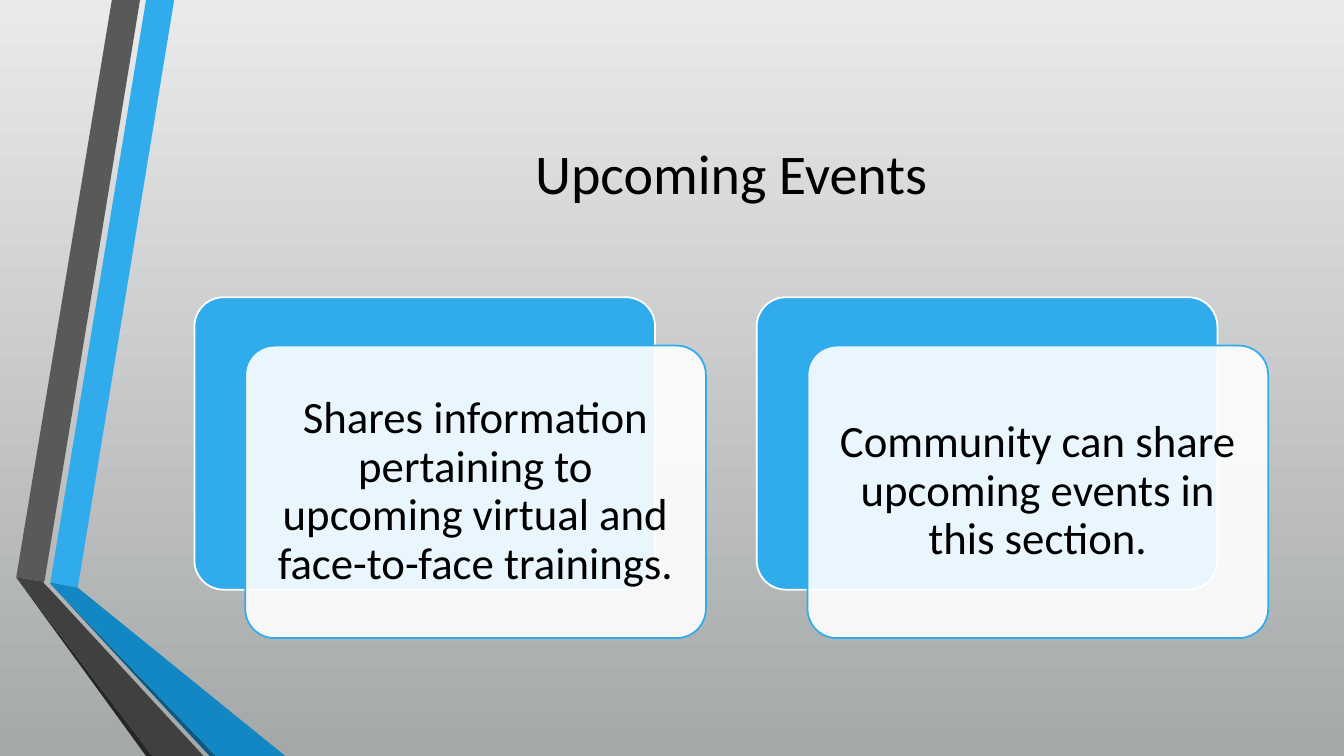
from dataclasses import dataclass

from lxml import etree
from pptx import Presentation
from pptx.dml.color import RGBColor
from pptx.enum import shapes, text
from pptx.oxml import ns
from pptx.util import Cm, Pt


@dataclass(frozen=True)
class Theme:
    font: str = "Calibri"
    title_size: float = 40
    card_size: float = 32
    outline: float = 1.25
    ink: str = "000000"
    white: str = "FFFFFF"
    blue: str = "30ACEC"
    blue_shade: str = "1287C3"
    blue_edge: str = "0C5A82"
    grey: str = "595959"
    grey_shade: str = "404040"
    grey_edge: str = "262626"
    sky: str = "E9EAEB"
    ground: str = "A5A8A9"


THEME = Theme()
SLIDE_WIDTH, SLIDE_HEIGHT = 33.87, 19.05

# Ribbon facets from back to front: colour and corner points in centimetres
RIBBONS = [
    (THEME.blue, [(1.27, 14.68), (1.96, 14.81), (4.39, 0), (3.68, 0)]),
    (THEME.grey, [(3.53, 0), (2.82, 0), (0.41, 14.55), (1.12, 14.66)]),
    (THEME.grey_edge, [(0.41, 14.55), (3.68, SLIDE_HEIGHT), (3.84, SLIDE_HEIGHT)]),
    (THEME.blue_edge, [(1.27, 14.71), (5.28, SLIDE_HEIGHT), (5.44, SLIDE_HEIGHT)]),
    (THEME.blue_shade, [(1.27, 14.71), (5.44, SLIDE_HEIGHT), (7.19, SLIDE_HEIGHT),
                        (1.96, 14.81), (1.27, 14.68)]),
    (THEME.grey_shade, [(5.13, SLIDE_HEIGHT), (1.22, 14.81), (1.09, 14.68),
                        (1.12, 14.66), (0.41, 14.55), (3.84, SLIDE_HEIGHT)]),
]

CONTENT_LEFT, CONTENT_WIDTH = 4.9, 27.05
CARD_TOP, CARD_WIDTH, CARD_HEIGHT = 7.49, 11.61, 7.37
CARD_PITCH = 14.17
FRONT_OFFSET = (1.28, 1.22)
EVENTS = [
    "Shares information pertaining to upcoming virtual and face-to-face trainings.",
    "Community can share upcoming events in this section.",
]


def set_all(target, values):
    for name, value in values.items():
        setattr(target, name, value)


def paint(shape, colour, outline=None):
    shape.shadow.inherit = False
    shape.fill.solid()
    shape.fill.fore_color.rgb = RGBColor.from_string(colour)
    if outline:
        shape.line.color.rgb = RGBColor.from_string(outline)
        shape.line.width = Pt(THEME.outline)
    else:
        shape.line.fill.background()


def set_opacity(shape, percent):
    colour = shape.fill.fore_color._xFill.find(ns.qn("a:srgbClr"))
    etree.SubElement(colour, ns.qn("a:alpha"), val=str(percent * 1000))


def write(shape, wording, size, inset, line_spacing=1.0):
    """Fill a shape with one centred paragraph."""
    frame = shape.text_frame
    set_all(frame, {
        "word_wrap": True,
        "vertical_anchor": text.MSO_ANCHOR.MIDDLE,
        "margin_left": inset, "margin_right": inset,
        "margin_top": inset, "margin_bottom": inset,
    })
    paragraph = frame.paragraphs[0]
    paragraph.text = wording
    set_all(paragraph, {"alignment": text.PP_ALIGN.CENTER, "line_spacing": line_spacing})
    set_all(paragraph.font, {"name": THEME.font, "size": Pt(size)})
    paragraph.font.color.rgb = RGBColor.from_string(THEME.ink)


def set_background(slide):
    fill = slide.background.fill
    fill.gradient()
    fill.gradient_angle = 270
    for stop, colour in zip(fill.gradient_stops, (THEME.sky, THEME.ground)):
        stop.color.rgb = RGBColor.from_string(colour)


def add_ribbon(slide, colour, points):
    corners = [(Cm(x), Cm(y)) for x, y in points]
    builder = slide.shapes.build_freeform(*corners[0])
    builder.add_line_segments(corners[1:], close=True)
    paint(builder.convert_to_shape(), colour)


def add_title(slide, wording):
    box = slide.shapes.add_textbox(Cm(CONTENT_LEFT), Cm(1.9), Cm(CONTENT_WIDTH), Cm(4.88))
    write(box, wording, THEME.title_size, Cm(0.25))


def add_panel(slide, left, top, colour, outline):
    panel = slide.shapes.add_shape(
        shapes.MSO_SHAPE.ROUNDED_RECTANGLE,
        Cm(left), Cm(top), Cm(CARD_WIDTH), Cm(CARD_HEIGHT))
    panel.adjustments[0] = 0.1
    paint(panel, colour, outline)
    return panel


def add_event_card(slide, left, wording):
    """Add a blue panel with a translucent text panel shifted over it."""
    shift_x, shift_y = FRONT_OFFSET
    add_panel(slide, left, CARD_TOP, THEME.blue, THEME.white)
    front = add_panel(slide, left + shift_x, CARD_TOP + shift_y, THEME.white, THEME.blue)
    set_opacity(front, 90)
    write(front, wording, THEME.card_size, Cm(0.33), line_spacing=0.9)


def main():
    presentation = Presentation()
    set_all(presentation, {"slide_width": Cm(SLIDE_WIDTH), "slide_height": Cm(SLIDE_HEIGHT)})
    slide = presentation.slides.add_slide(presentation.slide_layouts[6])
    set_background(slide)
    for colour, points in RIBBONS:
        add_ribbon(slide, colour, points)
    add_title(slide, "Upcoming Events")
    for index, wording in enumerate(EVENTS):
        add_event_card(slide, CONTENT_LEFT + index * CARD_PITCH, wording)
    presentation.save("out.pptx")


if __name__ == "__main__":
    main()
